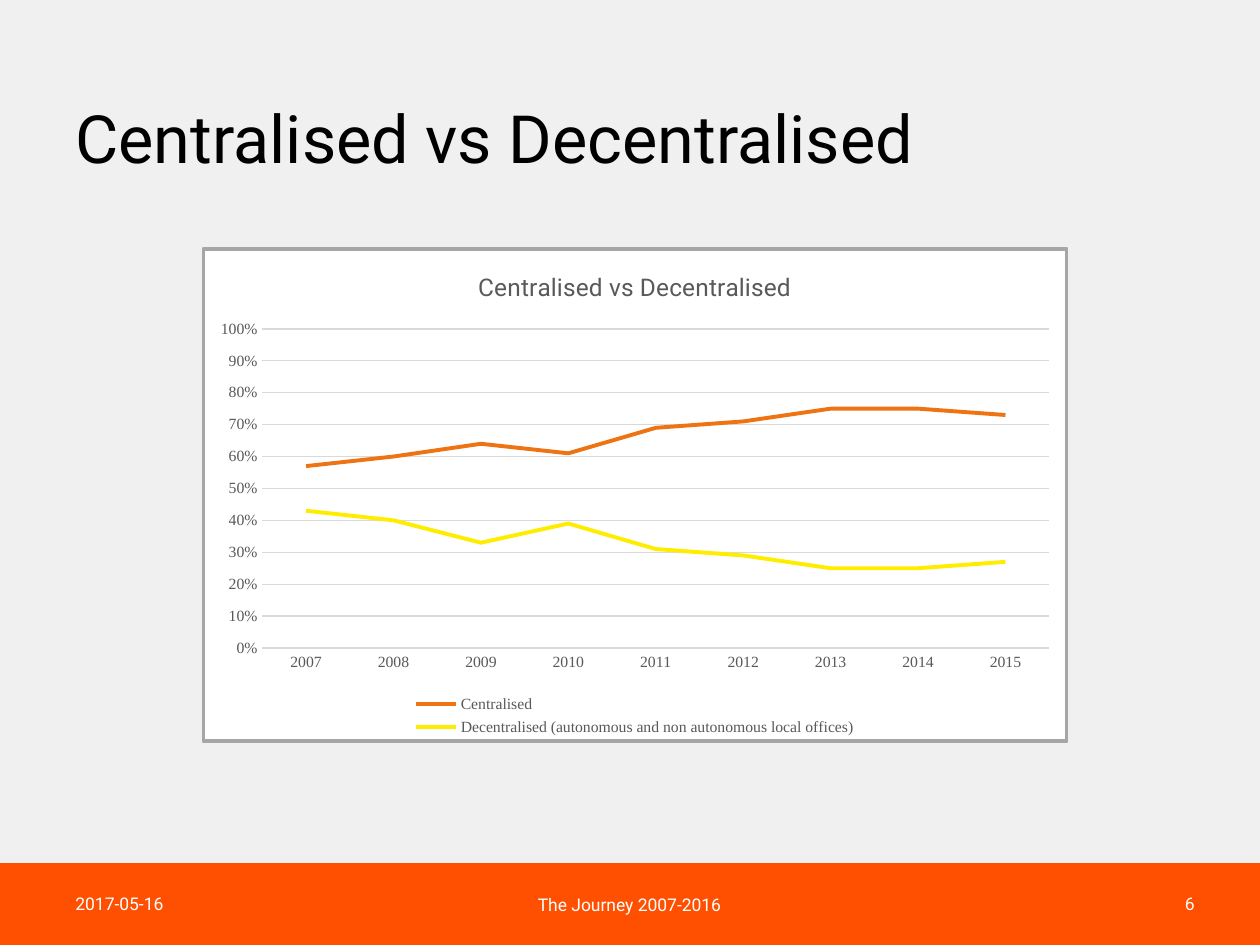
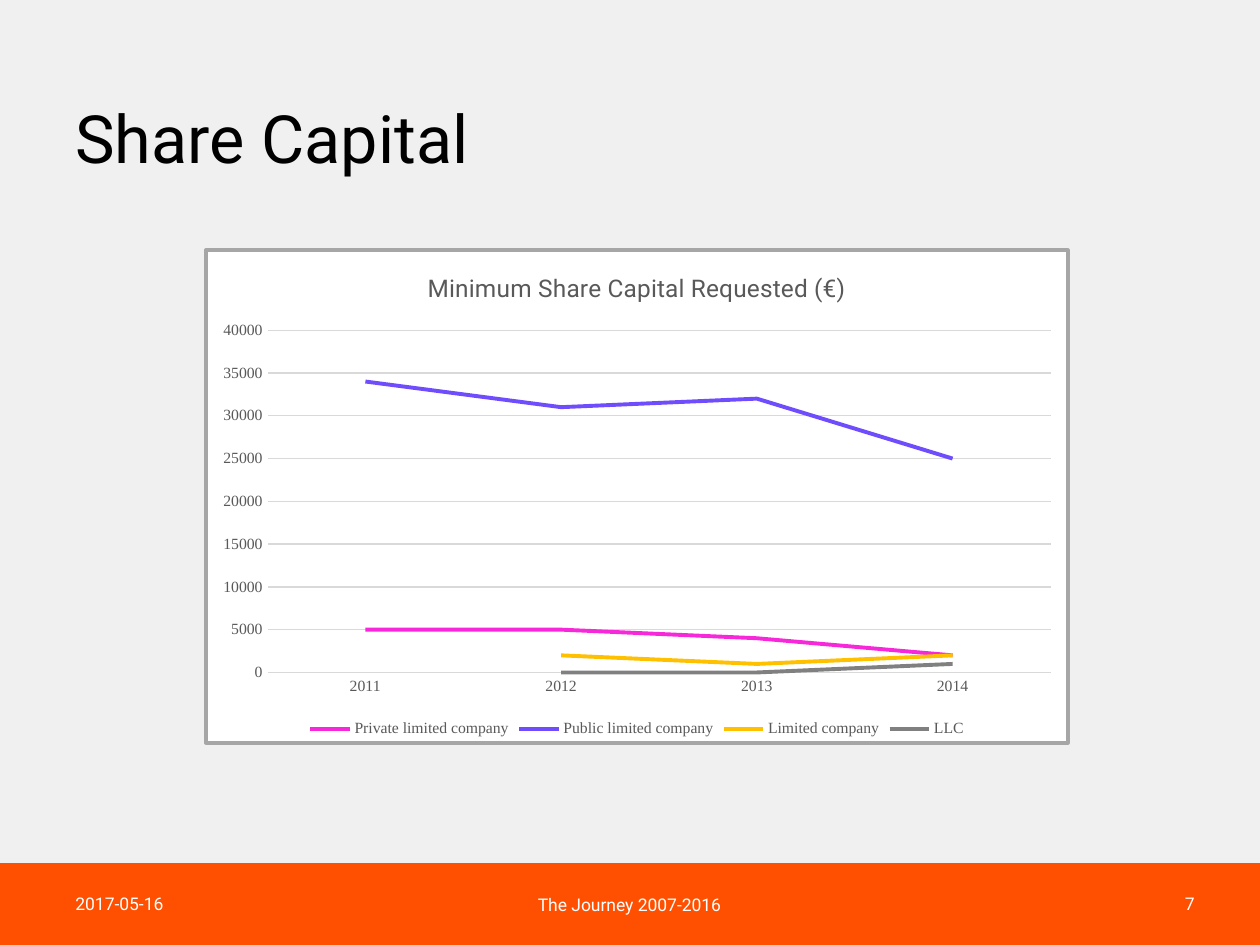
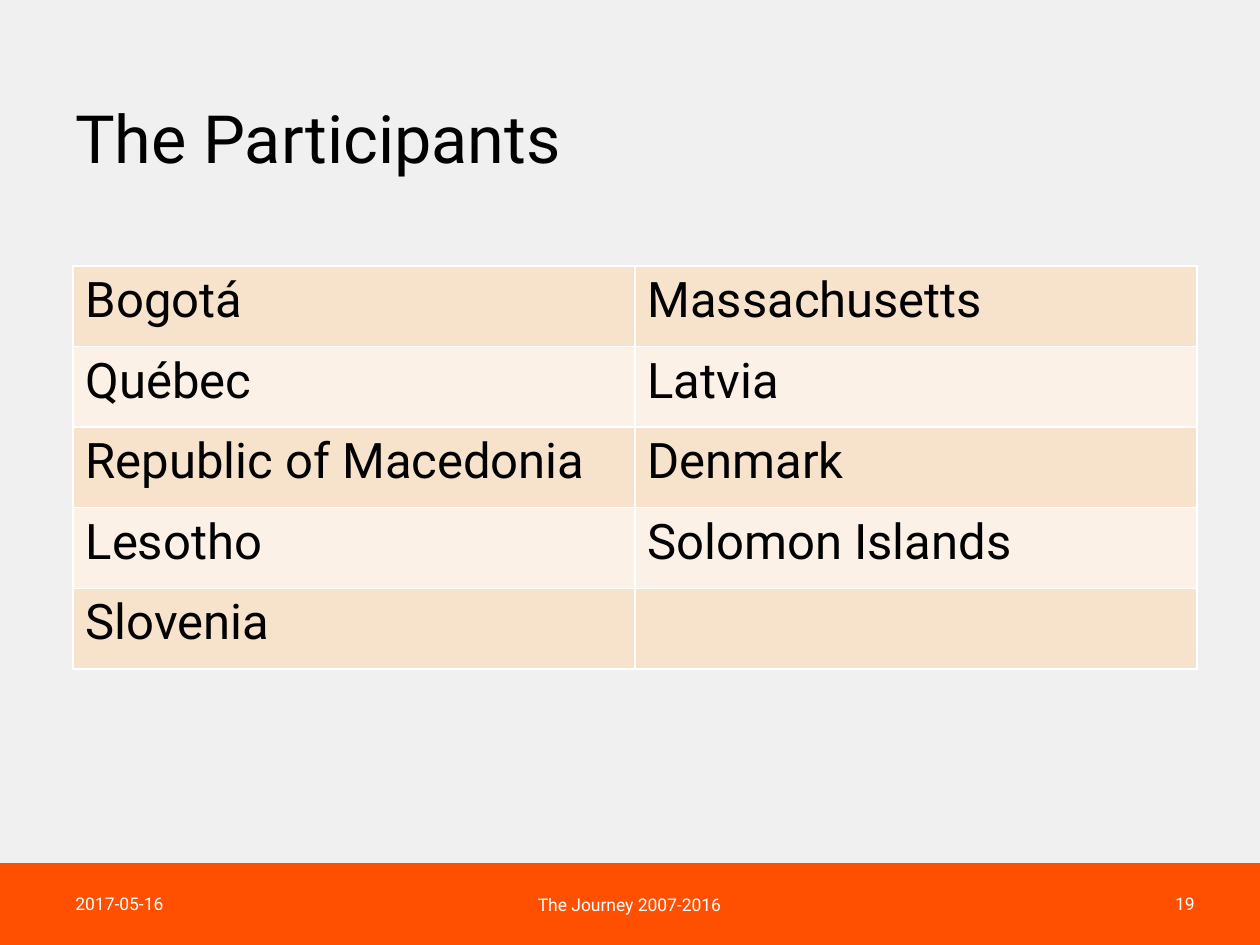
from dataclasses import dataclass
from lxml import etree
from pptx import Presentation
from pptx.chart import data as chart_data
from pptx.dml import color
from pptx.enum import chart as charts, shapes, text
from pptx.oxml import parse_xml
from pptx.oxml import ns
from pptx.util import Inches, Pt


@dataclass(frozen=True)
class Theme:
    font: str = "Roboto"
    chart_font: str = "Calibri"
    label_font: str = "Times New Roman"
    ground: str = "F0F0F0"
    band: str = "FE5000"
    black: str = "000000"
    white: str = "FFFFFF"
    label: str = "595959"
    grid: str = "D9D9D9"
    frame: str = "A6A6A6"
    rows: tuple = ("F7E2CC", "FBF1E7")
    title_size: int = 38
    table_size: int = 28
    chart_title_size: int = 14
    chart_size: int = 10
    label_size: int = 9
    footer_size: int = 10


theme = Theme()
rgb = color.RGBColor.from_string


def style_font(font, name, size, ink):
    font.name = name
    font.size = Pt(size)
    font.color.rgb = rgb(ink)


def write(frame, words, size, ink=theme.black, align=text.PP_ALIGN.LEFT, spacing=1.0):
    frame.word_wrap = True
    para = frame.paragraphs[0]
    para.alignment = align
    para.line_spacing = spacing
    span = para.add_run()
    span.text = words
    style_font(span.font, theme.font, size, ink)


line_slides = [
    dict(
        heading="Centralised vs Decentralised", number="6",
        chart_title="Centralised vs Decentralised",
        place=(1.6, 1.96, 6.88, 3.94), years=range(2007, 2016),
        number_format="0%", top=1, step=0.1,
        series=[
            ("Centralised", "EE7413",
             [0.57, 0.6, 0.64, 0.61, 0.69, 0.71, 0.75, 0.75, 0.73]),
            ("Decentralised (autonomous and non autonomous local offices)", "FFED00",
             [0.43, 0.4, 0.33, 0.39, 0.31, 0.29, 0.25, 0.25, 0.27]),
        ],
    ),
    dict(
        heading="Share Capital", number="7",
        chart_title="Minimum Share Capital Requested (€)",
        place=(1.62, 1.97, 6.87, 3.94), years=range(2011, 2015),
        number_format="0", top=40000, step=5000,
        series=[
            ("Private limited company", "F628D9", [5000, 5000, 4000, 2000]),
            ("Public limited company", "6F4DFD", [34000, 31000, 32000, 25000]),
            ("Limited company", "FFC000", [None, 2000, 1000, 2000]),
            ("LLC", "808080", [None, 0, 0, 1000]),
        ],
    ),
]
participants = [
    ("Bogotá", "Massachusetts"),
    ("Québec", "Latvia"),
    ("Republic of Macedonia", "Denmark"),
    ("Lesotho", "Solomon Islands"),
    ("Slovenia", ""),
]

deck = Presentation()
deck.slide_width, deck.slide_height = Inches(10), Inches(7.5)
ground = deck.slide_master.background.fill
ground.solid()
ground.fore_color.rgb = rgb(theme.ground)

pages = []
headings = [(item["heading"], item["number"]) for item in line_slides]
for heading, number in headings + [("The Participants", "19")]:
    page = deck.slides.add_slide(deck.slide_layouts[6])
    pages.append(page)
    band = page.shapes.add_shape(
        shapes.MSO_SHAPE.RECTANGLE, 0, Inches(6.85), deck.slide_width, Inches(0.65))
    band.shadow.inherit = False
    band.fill.solid()
    band.fill.fore_color.rgb = rgb(theme.band)
    band.line.fill.background()

    footer = dict(size=theme.footer_size, ink=theme.white)
    for words, place, look in [
        (heading, (0.5, 0.4, 9.07, 1.45), dict(size=theme.title_size, spacing=0.9)),
        ("2017-05-16", (0.5, 6.97, 2.25, 0.4), footer),
        ("The Journey 2007-2016", (3.87, 6.98, 2.25, 0.4),
         dict(footer, align=text.PP_ALIGN.CENTER)),
        (number, (7.33, 6.97, 2.25, 0.4), dict(footer, align=text.PP_ALIGN.RIGHT)),
    ]:
        box = page.shapes.add_textbox(*map(Inches, place))
        box.text_frame.vertical_anchor = text.MSO_ANCHOR.MIDDLE
        write(box.text_frame, words, **look)

for page, item in zip(pages, line_slides):
    figures = chart_data.CategoryChartData(number_format=item["number_format"])
    figures.categories = [str(year) for year in item["years"]]
    for name, ink, values in item["series"]:
        figures.add_series(name, values)
    chart = page.shapes.add_chart(
        charts.XL_CHART_TYPE.LINE, *map(Inches, item["place"]), figures).chart
    style_font(chart.font, theme.chart_font, theme.chart_size, theme.black)
    chart.plots[0].vary_by_categories = False

    chart.has_title = True
    write(chart.chart_title.text_frame, item["chart_title"],
          theme.chart_title_size, theme.label, align=text.PP_ALIGN.CENTER)
    chart.chart_title.text_frame.paragraphs[0].runs[0].font.bold = False
    chart.chart_title.include_in_layout = False

    chart.has_legend = True
    chart.legend.position = charts.XL_LEGEND_POSITION.BOTTOM
    chart.legend.include_in_layout = False
    style_font(chart.legend.font, theme.label_font, theme.label_size, theme.label)

    years, scale = chart.category_axis, chart.value_axis
    for axis in (years, scale):
        axis.major_tick_mark = axis.minor_tick_mark = charts.XL_TICK_MARK.NONE
        style_font(axis.tick_labels.font, theme.label_font, theme.label_size, theme.label)
    scale.minimum_scale = 0
    scale.maximum_scale = item["top"]
    scale.major_unit = item["step"]
    scale.tick_labels.number_format = item["number_format"]
    scale.tick_labels.number_format_is_linked = False
    scale.format.line.fill.background()
    for line in (years.format.line, scale.major_gridlines.format.line):
        line.color.rgb = rgb(theme.grid)
        line.width = Pt(0.75)

    for series, (name, ink, values) in zip(chart.plots[0].series, item["series"]):
        series.smooth = False
        series.marker.style = charts.XL_MARKER_STYLE.NONE
        series.format.line.color.rgb = rgb(ink)
        series.format.line.width = Pt(2.25)

    chart_area = parse_xml(
        f'<c:spPr {ns.nsdecls("c", "a")}>'
        f'<a:solidFill><a:srgbClr val="{theme.white}"/></a:solidFill>'
        f'<a:ln w="{Pt(2.25)}"><a:solidFill><a:srgbClr val="{theme.frame}"/></a:solidFill></a:ln>'
        '</c:spPr>')
    chart.element.find(ns.qn("c:chart")).addnext(chart_area)

table = pages[-1].shapes.add_table(
    len(participants), 2, Inches(0.58), Inches(2.11), Inches(8.92), Inches(3.2)).table
table.first_row = table.horz_banding = False
for row, names in enumerate(participants):
    for column, name in enumerate(names):
        cell = table.cell(row, column)
        cell.fill.solid()
        cell.fill.fore_color.rgb = rgb(theme.rows[row % 2])
        if name:
            write(cell.text_frame, name, theme.table_size)
        properties = cell._tc.get_or_add_tcPr()
        for position, side in enumerate(("lnL", "lnR", "lnT", "lnB")):
            border = etree.Element(ns.qn(f"a:{side}"), w=str(Pt(1)))
            paint = etree.SubElement(border, ns.qn("a:solidFill"))
            etree.SubElement(paint, ns.qn("a:srgbClr"), val=theme.white)
            properties.insert(position, border)

deck.save("out.pptx")
